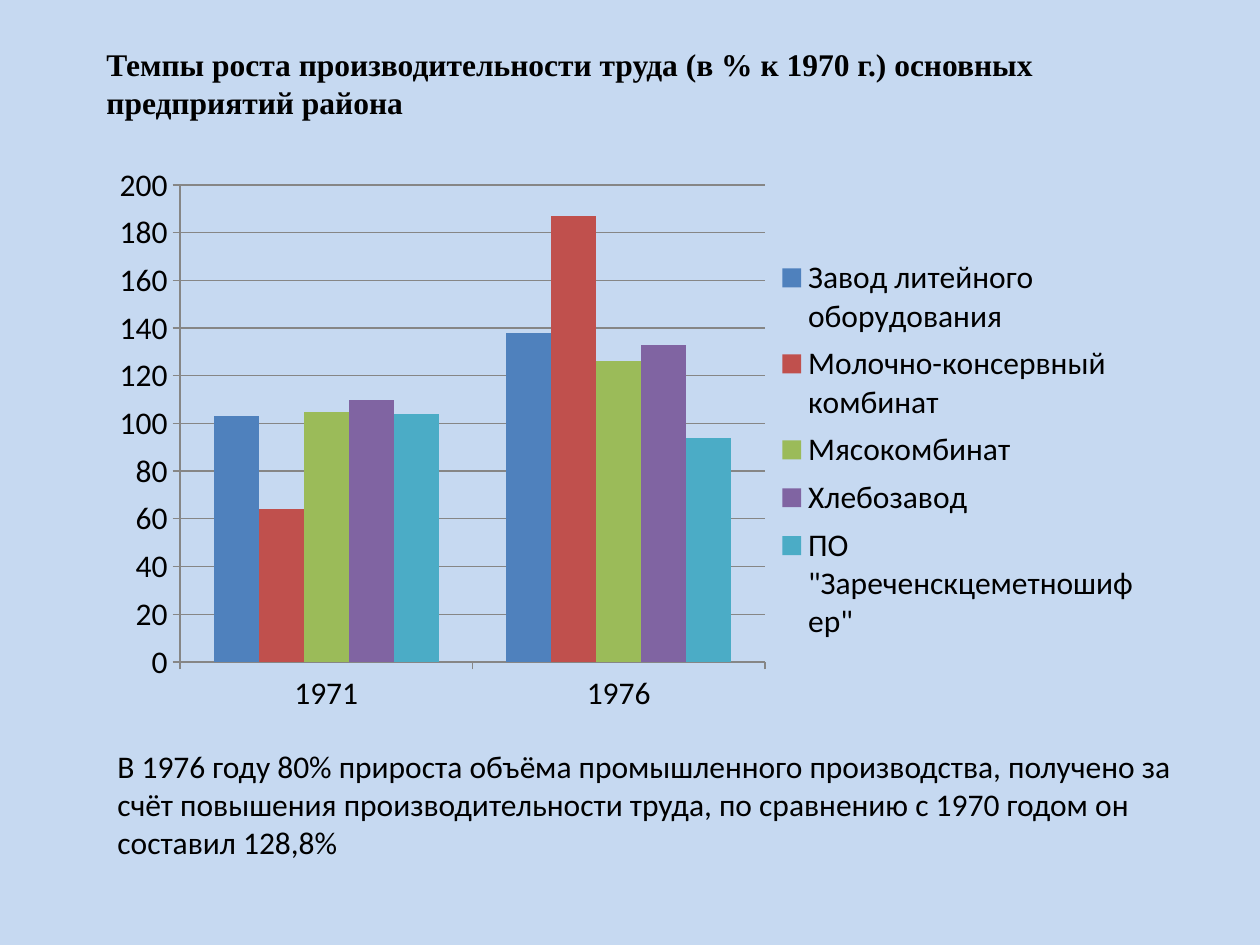
from dataclasses import dataclass

from lxml import etree
from pptx import Presentation
from pptx import util as u
from pptx.chart.data import CategoryChartData
from pptx.dml.color import RGBColor
from pptx.enum import chart as ch
from pptx.oxml.ns import qn

PX = 914400 / 126


@dataclass(frozen=True)
class Theme:
    """Hold the colours, fonts and type size of the slide."""
    back: str = "C6D9F1"
    ink: str = "000000"
    grid: str = "868686"
    bars: tuple = ("4F81BD", "C0504D", "9BBB59", "8064A2", "4BACC6")
    head: str = "Times New Roman"
    body: str = "Calibri"
    size: int = 18


T = Theme()
YEARS = ("1971", "1976")
PLANTS = {
    "Завод литейного оборудования": (103, 138),
    "Молочно-консервный комбинат": (64, 187),
    "Мясокомбинат": (105, 126),
    "Хлебозавод": (110, 133),
    'ПО "Зареченскцеметношифер"': (104, 94),
}
TITLE = "Темпы роста производительности труда (в % к 1970 г.) основных предприятий района"
NOTE = ("В 1976 году 80% прироста объёма промышленного производства, получено за "
        "счёт повышения производительности труда, по сравнению с 1970 годом он "
        "составил 128,8%")


def emu(box):
    """Turn px lengths into EMU."""
    return [u.Emu(round(n * PX)) for n in box]


def put(obj, **vals):
    """Set each given attribute on an object."""
    for key, val in vals.items():
        setattr(obj, key, val)


def style(font, name=T.body, bold=False):
    """Give a font its face, size, weight and colour."""
    put(font, name=name, size=u.Pt(T.size), bold=bold)
    font.color.rgb = RGBColor.from_string(T.ink)


def words(slide, box, line, **look):
    """Write one wrapped paragraph in a box."""
    frame = slide.shapes.add_textbox(*emu(box)).text_frame
    frame.word_wrap = True
    run = frame.paragraphs[0].add_run()
    run.text = line
    style(run.font, **look)


def place(part, spot, index, inner=False):
    """Fix a chart part at a px spot, as shares of the chart's box."""
    for old in part.findall(qn("c:layout")):
        part.remove(old)
    lay = etree.Element(qn("c:layout"))
    man = etree.SubElement(lay, qn("c:manualLayout"))
    vals = {"layoutTarget": "inner"} if inner else {}
    vals |= {"xMode": "edge", "yMode": "edge"} | spot
    for key, val in vals.items():
        etree.SubElement(man, qn(f"c:{key}")).set("val", str(val))
    part.insert(index, lay)


def share(box, spot):
    """Express a px spot inside a box as shares of its size."""
    wide, high = box[2:]
    return {key: round(n / full, 4)
            for key, n, full in zip("xywh", spot, (wide, high, wide, high))}


def graph(slide, box):
    """Draw the clustered columns with their legend."""
    data = CategoryChartData()
    data.categories = YEARS
    for name, vals in PLANTS.items():
        data.add_series(name, vals)
    kind = ch.XL_CHART_TYPE.COLUMN_CLUSTERED
    chart = slide.shapes.add_chart(kind, *emu(box), data).chart
    put(chart, has_title=False, has_legend=True)
    style(chart.font)
    plot = chart.plots[0]
    put(plot, gap_width=150, overlap=0, vary_by_categories=False)
    for bar, tint in zip(plot.series, T.bars):
        bar.format.fill.solid()
        bar.format.fill.fore_color.rgb = RGBColor.from_string(tint)
        bar.invert_if_negative = False
    cat, val = chart.category_axis, chart.value_axis
    put(val, minimum_scale=0, maximum_scale=200, major_unit=20,
        has_major_gridlines=True)
    for axis in (cat, val):
        axis.major_tick_mark = ch.XL_TICK_MARK.OUTSIDE
        style(axis.tick_labels.font)
    for part in (cat, val, val.major_gridlines):
        part.format.line.color.rgb = RGBColor.from_string(T.grid)
        part.format.line.width = u.Pt(0.75)
    key = chart.legend
    put(key, position=ch.XL_LEGEND_POSITION.RIGHT, include_in_layout=False)
    style(key.font)
    area = plot._element.getparent()
    place(area, share(box, (82, 30, 585, 477)), 0, inner=True)
    place(key._element, share(box, (696, 94, 352, 402)), 1)


def main():
    """Build the slide and save it."""
    deck = Presentation()
    deck.slide_width, deck.slide_height = emu((1260, 945))
    slide = deck.slides.add_slide(deck.slide_layouts[6])
    fill = slide.background.fill
    fill.solid()
    fill.fore_color.rgb = RGBColor.from_string(T.back)
    graph(slide, (98, 155, 1057, 568))
    words(slide, (94, 39, 1062, 140), TITLE, name=T.head, bold=True)
    words(slide, (105, 741, 1081, 127), NOTE)
    deck.save("out.pptx")


if __name__ == "__main__":
    main()
